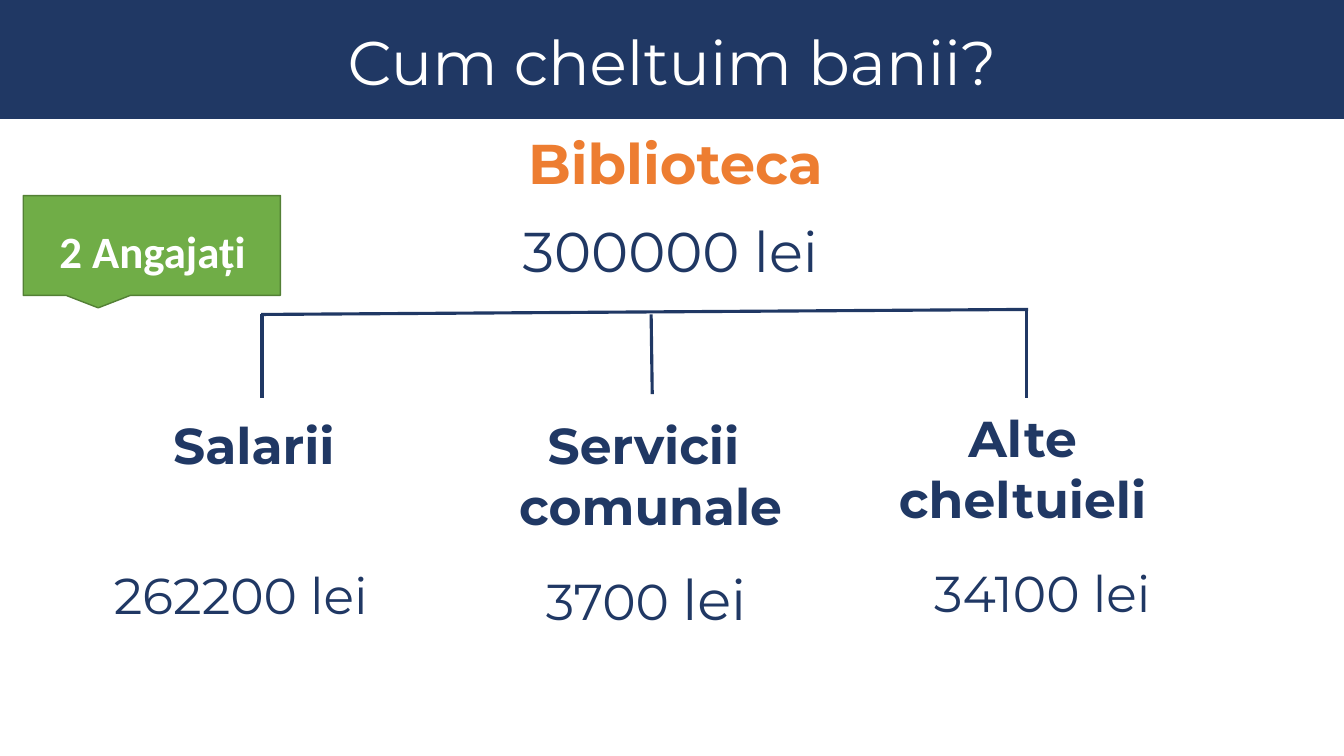
from pptx import Presentation
from pptx.dml.color import RGBColor
from pptx.enum.shapes import MSO_CONNECTOR as Connector, MSO_SHAPE as Shape
from pptx.enum.text import MSO_ANCHOR as Anchor, PP_ALIGN as Align
from pptx.oxml.ns import qn
from pptx.util import Inches, Pt
from lxml import etree

COLORS = {"navy": "203864", "orange": "ED7D31", "green": "70AD47",
          "dark_green": "538035", "white": "FFFFFF"}
FONT = "Montserrat"
LABEL_SIZE = 36
TOTAL_SIZE = 40

TITLE = "Cum cheltuim banii?"
INSTITUTION = "Biblioteca"
TOTAL = "300000 lei"
STAFF = "2 Angajați"

# Places are percentages of the slide's width and height.
BAND = (0, 0, 100, 15.73)
CALLOUT = (1.73, 25.87, 19.13, 13.2)
BRANCHES = [
    {"name": ["Salarii"], "name_at": (12.15, 54.13, 14.78, 9.47), "align": Align.LEFT,
     "amount": [("262200 lei", LABEL_SIZE)], "amount_at": (3.9, 74, 28.05, 9.47),
     "drop": (19.5, 41.6, 19.5, 52.67)},
    {"name": ["Servicii ", "comunale"], "name_at": (36.3, 54.13, 24.23, 17.47), "align": Align.CENTER,
     "amount": [("3700 ", LABEL_SIZE), ("lei", TOTAL_SIZE)], "amount_at": (34.05, 74, 28.05, 10.27),
     "drop": (48.45, 41.6, 48.53, 52.13)},
    {"name": ["Alte", "cheltuieli"], "name_at": (63.98, 53.2, 24.23, 17.47), "align": Align.CENTER,
     "amount": [("34100 lei", LABEL_SIZE)], "amount_at": (63.53, 73.73, 28.05, 9.47),
     "drop": (76.35, 40.93, 76.35, 52.67)},
]
CROSSBAR = (19.43, 41.6, 76.5, 40.93)

deck = Presentation()
deck.slide_width, deck.slide_height = Inches(13.333), Inches(7.5)
slide = deck.slides.add_slide(deck.slide_layouts[6])


def place(shares):
    sides = (deck.slide_width, deck.slide_height) * 2
    return [int(side * share / 100) for side, share in zip(sides, shares)]


def color(name):
    return RGBColor.from_string(COLORS[name])


def add_block(kind, at, fill, outline=None):
    block = slide.shapes.add_shape(kind, *place(at))
    block.shadow.inherit = False
    block.fill.solid()
    block.fill.fore_color.rgb = color(fill)
    if outline:
        block.line.color.rgb = color(outline)
        block.line.width = Pt(1)
    else:
        block.line.fill.background()


def add_text(lines, at, size, ink="navy", bold=False, align=Align.CENTER, font=FONT):
    frame = slide.shapes.add_textbox(*place(at)).text_frame
    frame.word_wrap = True
    for index, line in enumerate(lines):
        paragraph = frame.paragraphs[0] if index == 0 else frame.add_paragraph()
        paragraph.alignment = align
        pieces = [(line, size)] if isinstance(line, str) else line
        for words, points in pieces:
            run = paragraph.add_run()
            run.text = words
            run.font.name = font
            run.font.size = Pt(points)
            run.font.bold = bold
            run.font.color.rgb = color(ink)
    return frame


def add_line(ends):
    line = slide.shapes.add_connector(Connector.STRAIGHT, *place(ends))
    line.line.color.rgb = color("navy")
    line.line.width = Pt(2.25)
    etree.SubElement(line._element.spPr, qn("a:effectLst"))


add_block(Shape.RECTANGLE, BAND, "navy")
heading = add_text([TITLE], (1.28, 3.33, 97.5, 10.8), 44, "white")
heading.vertical_anchor = Anchor.MIDDLE
heading.paragraphs[0].line_spacing = 0.9

add_text([INSTITUTION], (1.73, 16.4, 97.05, 10.27), TOTAL_SIZE, "orange", True)
add_text([TOTAL], (23.63, 28, 52.5, 10.27), TOTAL_SIZE)

add_line(CROSSBAR)
for branch in BRANCHES:
    add_line(branch["drop"])
    add_text(branch["name"], branch["name_at"], LABEL_SIZE, bold=True, align=branch["align"])
    add_text([branch["amount"]], branch["amount_at"], LABEL_SIZE)

add_block(Shape.RECTANGULAR_CALLOUT, CALLOUT, "green", "dark_green")
add_text([STAFF], (3.68, 28.93, 17.63, 8.53), 32, "white", True, Align.LEFT, "Calibri")

deck.save("out.pptx")
